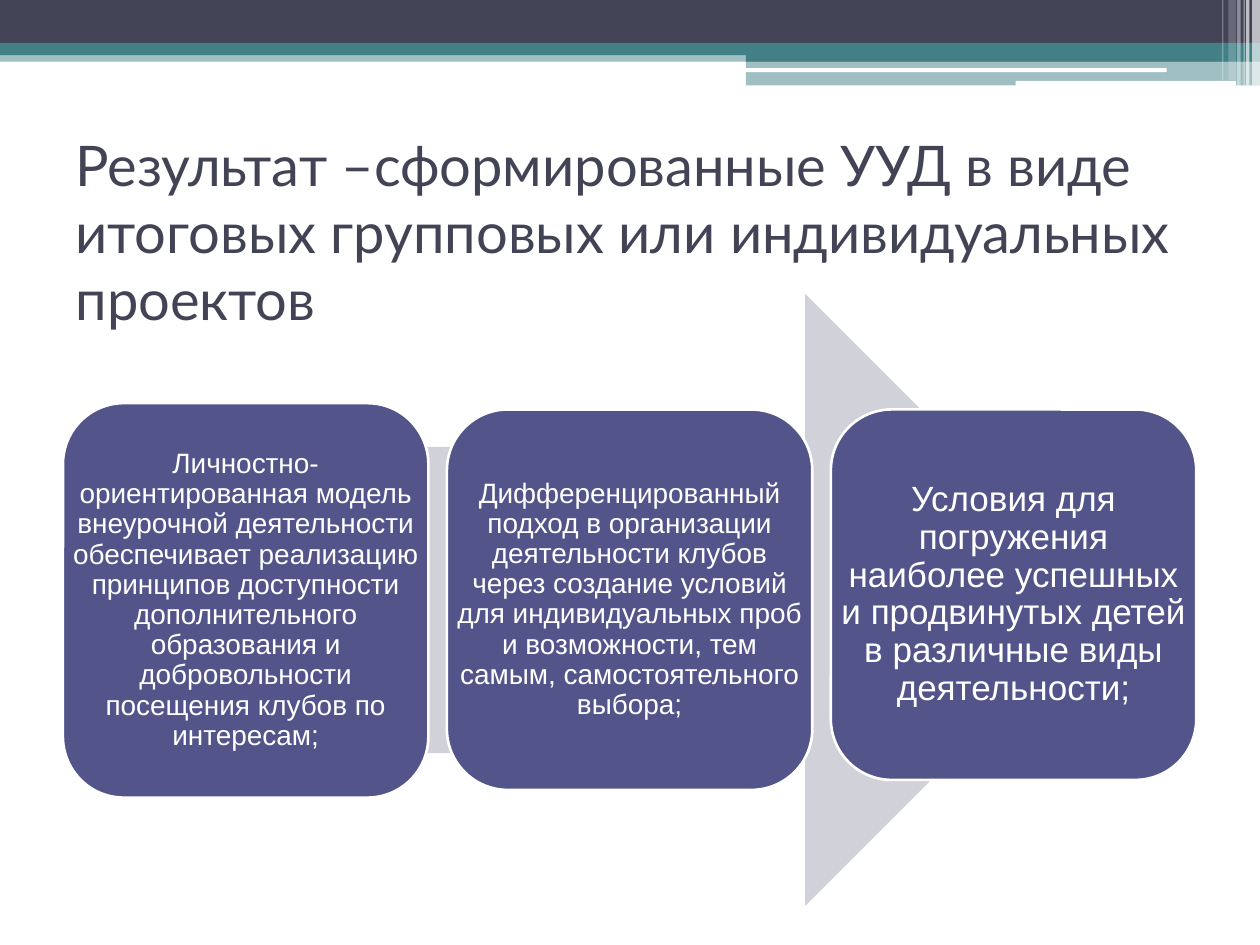
from lxml import etree
from pptx import Presentation
from pptx.dml.color import RGBColor
from pptx.enum import shapes, text
from pptx.oxml.ns import qn
from pptx.util import Pt

NAVY = RGBColor(0x42, 0x44, 0x56)
TEAL = RGBColor(0x43, 0x80, 0x86)
WHITE = RGBColor(0xFF, 0xFF, 0xFF)
INDIGO = RGBColor(0x53, 0x54, 0x8A)
PALE = RGBColor(0xD1, 0xD1, 0xDA)

RECT = shapes.MSO_SHAPE.RECTANGLE
ROUND = shapes.MSO_SHAPE.ROUNDED_RECTANGLE
ARROW = shapes.MSO_SHAPE.RIGHT_ARROW

TITLE = "Результат –сформированные УУД в виде итоговых групповых или индивидуальных проектов"
CARDS = [
    ("Личностно-ориентированная модель внеурочной деятельности обеспечивает "
     "реализацию принципов доступности дополнительного образования и "
     "добровольности посещения клубов по интересам;", 16, 5, 230.4, 225.4),
    ("Дифференцированный подход в организации деятельности клубов через "
     "создание условий для индивидуальных проб и возможности, тем самым, "
     "самостоятельного выбора;", 16, 5, 234, 217.4),
    ("Условия для погружения наиболее успешных и продвинутых детей "
     "в различные виды деятельности;", 20, 6, 234, 211.7),
]


def set_attrs(obj, values):
    for name, value in values.items():
        setattr(obj, name, value)


def add_shape(s, kind, box, color, alpha=100):
    sp = s.shapes.add_shape(kind, *map(Pt, box))
    sp.shadow.inherit = False
    sp.fill.solid()
    sp.fill.fore_color.rgb = color
    sp.line.fill.background()
    if alpha < 100:
        clr = sp.fill._xPr.find(qn("a:solidFill"))[0]
        etree.SubElement(clr, qn("a:alpha"), val=str(alpha * 1000))
    return sp


def write(tf, words, frame, para, font, color):
    set_attrs(tf, frame)
    p = tf.paragraphs[0]
    set_attrs(p, para)
    r = p.add_run()
    r.text = words
    set_attrs(r.font, font)
    r.font.color.rgb = color


def add_header(s, left, top, width):
    right = left + width
    tab = 426.2
    for x, y, w, h, color, alpha in [
        (0, 28.8, width, 6.5, TEAL, 50),
        (0, 0, width, 24.5, NAVY, 100),
        (0, 24.5, width, 7, TEAL, 100),
        (tab, 28.1, width - tab, 7.2, TEAL, 100),
        (tab, 34.9, width - tab, 14, TEAL, 50),
    ]:
        add_shape(s, RECT, (left + x, top + y, w, h), color, alpha)
    for x, y, w, h in [(425.5, 39, 241.2, 2.2), (580.3, 46.2, 126, 2.9)]:
        add_shape(s, ROUND, (left + x, top + y, w, h), WHITE)
    for offset, w, h, alpha in [
        (4.5, 4.5, 49, 65), (8, 2, 49, 65), (9.4, 0.7, 49, 60),
        (13, 2, 49, 40), (18, 4.3, 46, 20), (21.6, 0.7, 46, 30),
    ]:
        add_shape(s, RECT, (right - offset, top, w, h), WHITE, alpha)


def add_title(s, left, top, width, height):
    sp = s.shapes.title
    set_attrs(sp, dict(left=Pt(left), top=Pt(top), width=Pt(width), height=Pt(height)))
    write(sp.text_frame, TITLE,
          dict(word_wrap=True, auto_size=text.MSO_AUTO_SIZE.NONE,
               vertical_anchor=text.MSO_ANCHOR.MIDDLE),
          dict(alignment=text.PP_ALIGN.LEFT),
          dict(name="Lato", size=Pt(32)), NAVY)


def add_card(s, box, words, size, inset):
    sp = add_shape(s, ROUND, box, INDIGO)
    sp.line.color.rgb = WHITE
    sp.line.width = Pt(1.5)
    margins = {f"margin_{side}": Pt(inset) for side in ("left", "right", "top", "bottom")}
    tb = s.shapes.add_textbox(*map(Pt, box))
    write(tb.text_frame, words,
          dict(word_wrap=True, vertical_anchor=text.MSO_ANCHOR.MIDDLE, **margins),
          dict(alignment=text.PP_ALIGN.CENTER, line_spacing=0.9,
               space_after=Pt(size * 0.35)),
          dict(name="Arial", size=Pt(size)), WHITE)


def add_process(s, left, top, width, height):
    indent = width * 0.075
    add_shape(s, ARROW, (left + indent, top, width - 2 * indent, height), PALE)
    card_w = 208.8
    step = (width - card_w) / (len(CARDS) - 1)
    for i, (words, size, inset, y, h) in enumerate(CARDS):
        add_card(s, (left + i * step, y, card_w, h), words, size, inset)


def main():
    prs = Presentation()
    set_attrs(prs, dict(slide_width=Pt(720), slide_height=Pt(540)))
    s = prs.slides.add_slide(prs.slide_layouts[5])
    add_header(s, 0, 0, 720)
    add_title(s, 36, 90, 648, 84.2)
    add_process(s, 36, 167.8, 647.6, 350)
    prs.save("out.pptx")


if __name__ == "__main__":
    main()
